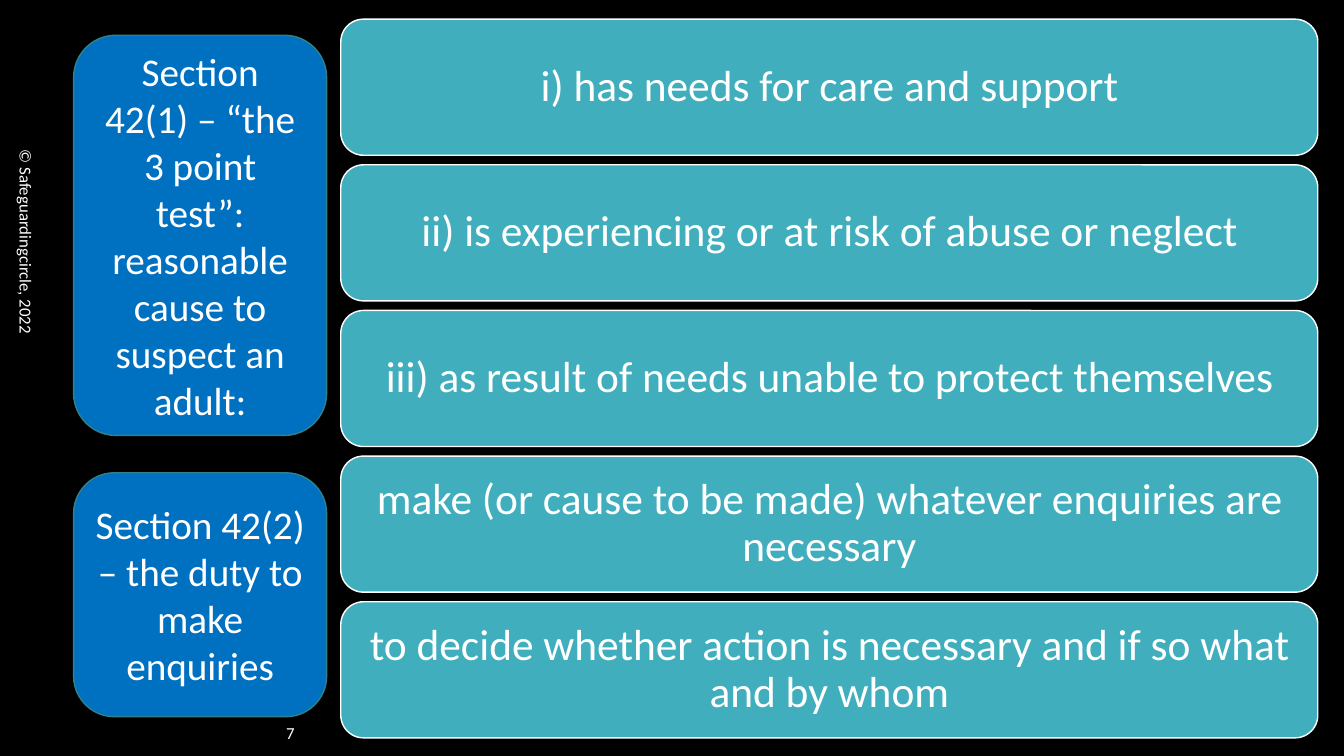
from dataclasses import dataclass

from pptx import Presentation
from pptx.dml.color import RGBColor
from pptx.enum.shapes import MSO_SHAPE
from pptx.enum.text import MSO_ANCHOR, PP_ALIGN
from pptx.util import Inches, Pt

ROUNDED = MSO_SHAPE.ROUNDED_RECTANGLE
MIDDLE = MSO_ANCHOR.MIDDLE
CENTER = PP_ALIGN.CENTER
RIGHT = PP_ALIGN.RIGHT

BLACK = RGBColor(0x00, 0x00, 0x00)
WHITE = RGBColor(0xFF, 0xFF, 0xFF)
TEAL = RGBColor(0x41, 0xAE, 0xBD)
DARK_TEAL = RGBColor(0x30, 0x81, 0x8C)
BLUE = RGBColor(0x00, 0x70, 0xC0)

FONT = "Calibri"
BLANK_LAYOUT = 6
FIRST_TOP, LAST_TOP = 0.19, 5.97


@dataclass(frozen=True)
class Style:
    fill: RGBColor
    line: RGBColor
    size: float
    spacing: float
    margin_x: float
    margin_y: float


@dataclass(frozen=True)
class Card:
    text: str
    left: float
    top: float
    width: float
    height: float
    style: Style


@dataclass(frozen=True)
class Label:
    text: str
    left: float
    top: float
    width: float
    align: PP_ALIGN
    rotation: float = 0


SECTION = Style(BLUE, DARK_TEAL, 28, 1.0, 0.1, 0.05)
CRITERION = Style(TEAL, WHITE, 31, 0.9, 0.13, 0.13)

CRITERIA = (
    "i) has needs for care and support",
    "ii) is experiencing or at risk of abuse or neglect",
    "iii) as result of needs unable to protect themselves",
    "make (or cause to be made) whatever enquiries are necessary",
    "to decide whether action is necessary and if so what and by whom",
)
PITCH = (LAST_TOP - FIRST_TOP) / (len(CRITERIA) - 1)

CARDS = [
    Card(text, 3.38, FIRST_TOP + index * PITCH, 9.69, 1.35, CRITERION)
    for index, text in enumerate(CRITERIA)
] + [
    Card(
        "Section 42(1) – “the 3 point test”: reasonable cause to suspect an adult:",
        0.73, 0.35, 2.51, 3.97, SECTION,
    ),
    Card("Section 42(2) – the duty to make enquiries", 0.73, 4.69, 2.51, 2.42, SECTION),
]

LABELS = (
    Label("© Safeguardingcircle, 2022", -1.99, 2.2, 4.5, CENTER, 90),
    Label("7", 0.02, 7.07, 3, RIGHT),
)


def write_text(shape, text: str, size: float, align: PP_ALIGN, spacing: float = 1.0) -> None:
    text_frame = shape.text_frame
    text_frame.text = text
    text_frame.word_wrap = True
    text_frame.vertical_anchor = MIDDLE
    paragraph = text_frame.paragraphs[0]
    paragraph.alignment = align
    paragraph.line_spacing = spacing
    font = paragraph.runs[0].font
    font.name = FONT
    font.size = Pt(size)
    font.color.rgb = WHITE


def add_card(slide, card: Card) -> None:
    style = card.style
    shape = slide.shapes.add_shape(
        ROUNDED, Inches(card.left), Inches(card.top), Inches(card.width), Inches(card.height)
    )
    shape.shadow.inherit = False
    shape.fill.solid()
    shape.fill.fore_color.rgb = style.fill
    shape.line.color.rgb = style.line
    shape.line.width = Pt(1)
    write_text(shape, card.text, style.size, CENTER, style.spacing)
    text_frame = shape.text_frame
    text_frame.margin_left = text_frame.margin_right = Inches(style.margin_x)
    text_frame.margin_top = text_frame.margin_bottom = Inches(style.margin_y)


def add_label(slide, label: Label) -> None:
    shape = slide.shapes.add_textbox(
        Inches(label.left), Inches(label.top), Inches(label.width), Inches(0.4)
    )
    shape.rotation = label.rotation
    write_text(shape, label.text, 12, label.align)


def main() -> None:
    presentation = Presentation()
    presentation.slide_width = Inches(13.33)
    presentation.slide_height = Inches(7.5)
    slide = presentation.slides.add_slide(presentation.slide_layouts[BLANK_LAYOUT])
    slide.background.fill.solid()
    slide.background.fill.fore_color.rgb = BLACK
    for label in LABELS:
        add_label(slide, label)
    for card in CARDS:
        add_card(slide, card)
    presentation.save("out.pptx")


if __name__ == "__main__":
    main()
